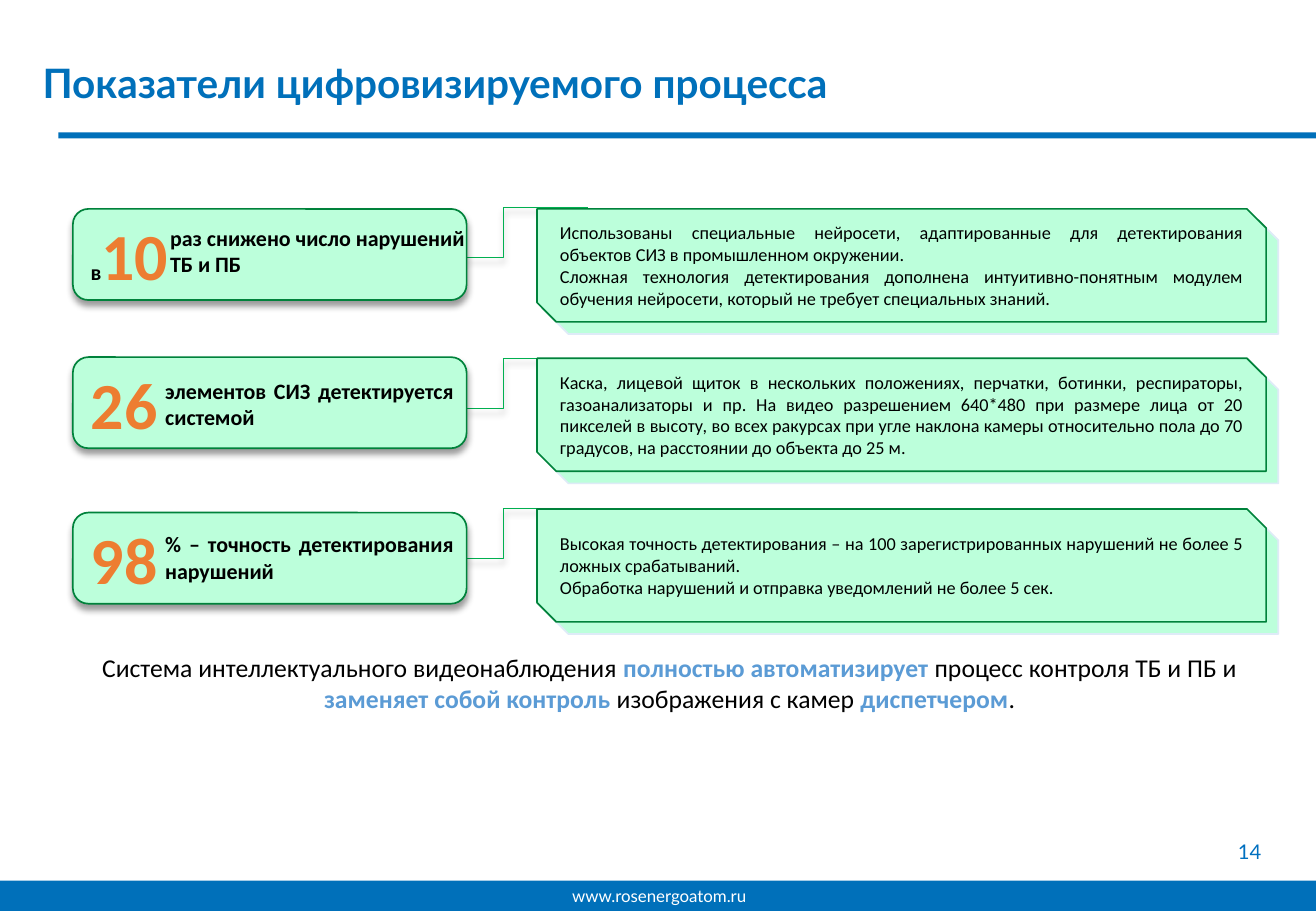
import pptx
import pptx.util
import pptx.dml.color
import pptx.enum.shapes
import pptx.enum.text
from dataclasses import dataclass
from lxml import etree
from pptx.oxml.ns import qn

# Content
TITLE = "Показатели цифровизируемого процесса"
SITE = "www.rosenergoatom.ru"
PAGE_NUMBER = "14"
INDICATORS = [
    {"prefix": "в", "value": "10",
     "caption": "раз снижено число нарушений ТБ и ПБ",
     "details": ["Использованы специальные нейросети, адаптированные для детектирования "
                 "объектов СИЗ в промышленном окружении.",
                 "Сложная технология детектирования дополнена интуитивно-понятным модулем "
                 "обучения нейросети, который не требует специальных знаний."],
     "badge_top": 172, "panel_top": 172, "caption_box": (129, 180, 277, 55),
     "caption_align": "LEFT"},
    {"prefix": "", "value": "26",
     "caption": "элементов СИЗ детектируется системой",
     "details": ["Каска, лицевой щиток в нескольких положениях, перчатки, ботинки, "
                 "респираторы, газоанализаторы и пр. На видео разрешением 640*480 при "
                 "размере лица от 20 пикселей в высоту, во всех ракурсах при угле наклона "
                 "камеры относительно пола до 70 градусов, на расстоянии до объекта до 25 м."],
     "badge_top": 294, "panel_top": 295, "caption_box": (125, 306, 259, 55),
     "caption_align": "JUSTIFY"},
    {"prefix": "", "value": "98",
     "caption": "% – точность детектирования нарушений",
     "details": ["Высокая точность детектирования – на 100 зарегистрированных нарушений "
                 "не более 5 ложных срабатываний.",
                 "Обработка нарушений и отправка уведомлений не более 5 сек."],
     "badge_top": 422, "panel_top": 419, "caption_box": (125, 432, 259, 55),
     "caption_align": "JUSTIFY"},
]
CONCLUSION = [  # text, highlighted
    ("Система интеллектуального видеонаблюдения ", False),
    ("полностью автоматизирует ", True),
    ("процесс контроля ТБ и ПБ и ", False),
    ("заменяет собой контроль", True),
    (" изображения с камер ", False),
    ("диспетчером", True),
    (".", False),
]


@dataclass(frozen=True)
class Theme:
    heading_font: str = "Lato"
    body_font: str = "Calibri"
    blue: str = "0070BA"
    number_blue: str = "0070C0"
    highlight: str = "5B9BD5"
    orange: str = "ED7D31"
    mint: str = "BCFFDB"
    green: str = "00823B"
    link_green: str = "00B050"
    pale_edge: str = "DEEBF7"
    black: str = "000000"
    white: str = "FFFFFF"
    title_size: float = 24
    value_size: float = 39
    conclusion_size: float = 15.2
    caption_size: float = 13
    detail_size: float = 10.8
    number_size: float = 12
    site_size: float = 10


THEME = Theme()
SHAPE = pptx.enum.shapes.MSO_SHAPE
ALIGN = pptx.enum.text.PP_ALIGN
ANCHOR = pptx.enum.text.MSO_ANCHOR
PX = 9144  # 100 px to the inch
PAGE_WIDTH, PAGE_HEIGHT = 1083, 750
BADGE_LEFT, BADGE_WIDTH, BADGE_HEIGHT = 60, 324, 75
PANEL_LEFT, PANEL_WIDTH, PANEL_HEIGHT = 442, 600, 93
PANEL_OFFSET = 10
LINK_TOP, LINK_PITCH, LINK_RISE, LINK_WIDTH = 171, 124, 41, 100


# Helpers
def px(*lengths):
    return [pptx.util.Emu(length * PX) for length in lengths]


def color(code):
    return pptx.dml.color.RGBColor.from_string(code)


def format_font(font, size, code, bold=False, name=THEME.body_font):
    font.name, font.size, font.bold = name, pptx.util.Pt(size), bold
    font.color.rgb = color(code)


def set_frame(frame, anchor=ANCHOR.TOP, insets=(11, 5, 11, 5)):
    frame.word_wrap = True
    frame.auto_size = pptx.enum.text.MSO_AUTO_SIZE.NONE
    frame.vertical_anchor = anchor
    (frame.margin_left, frame.margin_top,
     frame.margin_right, frame.margin_bottom) = px(*insets)


def add_block(page, kind, box, fill, edge=None, adjustments=()):
    shape = page.shapes.add_shape(kind, *px(*box))
    shape.shadow.inherit = False
    for index, value in enumerate(adjustments):
        shape.adjustments[index] = value
    shape.fill.solid()
    shape.fill.fore_color.rgb = color(fill)
    if edge:
        shape.line.color.rgb = color(edge)
        shape.line.width = pptx.util.Pt(1)
    else:
        shape.line.fill.background()
    return shape


def add_text(page, box, spans, align=ALIGN.LEFT, **frame_options):
    """Each span is (text, *format_font arguments)."""
    shape = page.shapes.add_textbox(*px(*box))
    set_frame(shape.text_frame, **frame_options)
    fill_para(shape.text_frame.paragraphs[0], spans, align)


def fill_para(para, spans, align):
    para.alignment = align
    for text, *style in spans:
        span = para.add_run()
        span.text = text
        format_font(span.font, *style)


def add_soft_shadow(item):
    effects = item._element.spPr.get_or_add_effectLst()
    shadow = etree.SubElement(effects, qn("a:outerShdw"), blurRad="50800", dist="38100",
                              dir="5400000", algn="t", rotWithShape="0")
    tint = etree.SubElement(shadow, qn("a:srgbClr"), val=THEME.black)
    etree.SubElement(tint, qn("a:alpha"), val="40000")


def add_link(page, top):
    left = BADGE_LEFT + BADGE_WIDTH
    link = page.shapes.add_connector(pptx.enum.shapes.MSO_CONNECTOR.ELBOW,
                                     *px(left, top + LINK_RISE, left + LINK_WIDTH, top))
    link.line.color.rgb = color(THEME.link_green)
    link.line.width = pptx.util.Pt(0.5)
    guides = link._element.spPr.find(qn("a:prstGeom")).get_or_add_avLst()
    etree.SubElement(guides, qn("a:gd"), name="adj1", fmla="val 30700")
    add_soft_shadow(link)


def add_badge(page, item):
    badge = add_block(page, SHAPE.ROUNDED_RECTANGLE,
                      (BADGE_LEFT, item["badge_top"], BADGE_WIDTH, BADGE_HEIGHT),
                      THEME.mint, THEME.green, [0.17])
    add_soft_shadow(badge)
    set_frame(badge.text_frame, ANCHOR.MIDDLE)
    spans = [(item["value"], THEME.value_size, THEME.orange, True)]
    if item["prefix"]:
        spans.insert(0, (item["prefix"], THEME.caption_size, THEME.black, True))
    fill_para(badge.text_frame.paragraphs[0], spans, ALIGN.LEFT)
    add_text(page, item["caption_box"],
             [(item["caption"], THEME.caption_size, THEME.black, True)],
             ALIGN[item["caption_align"]])


def add_panel(page, item):
    for offset, edge in ((PANEL_OFFSET, THEME.pale_edge), (0, THEME.green)):
        panel = add_block(page, SHAPE.SNIP_2_DIAG_RECTANGLE,
                          (PANEL_LEFT + offset, item["panel_top"] + offset,
                           PANEL_WIDTH, PANEL_HEIGHT), THEME.mint, edge, [0, 0.17])
    frame = panel.text_frame
    set_frame(frame, ANCHOR.MIDDLE)
    for index, text in enumerate(item["details"]):
        para = frame.add_paragraph() if index else frame.paragraphs[0]
        fill_para(para, [(text, THEME.detail_size, THEME.black)], ALIGN.JUSTIFY)


def main():
    deck = pptx.Presentation()
    deck.slide_width, deck.slide_height = px(PAGE_WIDTH, PAGE_HEIGHT)
    page = deck.slides.add_slide(deck.slide_layouts[5])

    # Title, rule and footer
    title = page.shapes.title
    title.left, title.top, title.width, title.height = px(35, 46, 777, 48)
    title.text_frame.text = TITLE
    set_frame(title.text_frame, ANCHOR.MIDDLE, (0, 5, 10, 5))
    para = title.text_frame.paragraphs[0]
    para.alignment, para.line_spacing = ALIGN.LEFT, 0.9
    format_font(para.runs[0].font, THEME.title_size, THEME.blue, True, THEME.heading_font)
    add_block(page, SHAPE.RECTANGLE, (48, 109, PAGE_WIDTH - 48, 5), THEME.blue)
    add_block(page, SHAPE.RECTANGLE, (0, 725, PAGE_WIDTH, 25), THEME.blue)
    add_text(page, (451, 724, 183, 27),
             [(SITE, THEME.site_size, THEME.white, False, THEME.heading_font)], ALIGN.CENTER)
    add_text(page, (890, 678, 168, 46),
             [(PAGE_NUMBER, THEME.number_size, THEME.number_blue, False, THEME.heading_font)],
             ALIGN.RIGHT, anchor=ANCHOR.MIDDLE, insets=(20, 10, 20, 10))

    # Indicators
    for row, item in enumerate(INDICATORS):
        add_link(page, LINK_TOP + row * LINK_PITCH)
        add_badge(page, item)
        add_panel(page, item)

    # Conclusion
    add_text(page, (60, 532, 982, 62),
             [(text, THEME.conclusion_size, THEME.highlight if strong else THEME.black, strong)
              for text, strong in CONCLUSION], ALIGN.CENTER)
    deck.save("out.pptx")


if __name__ == "__main__":
    main()
